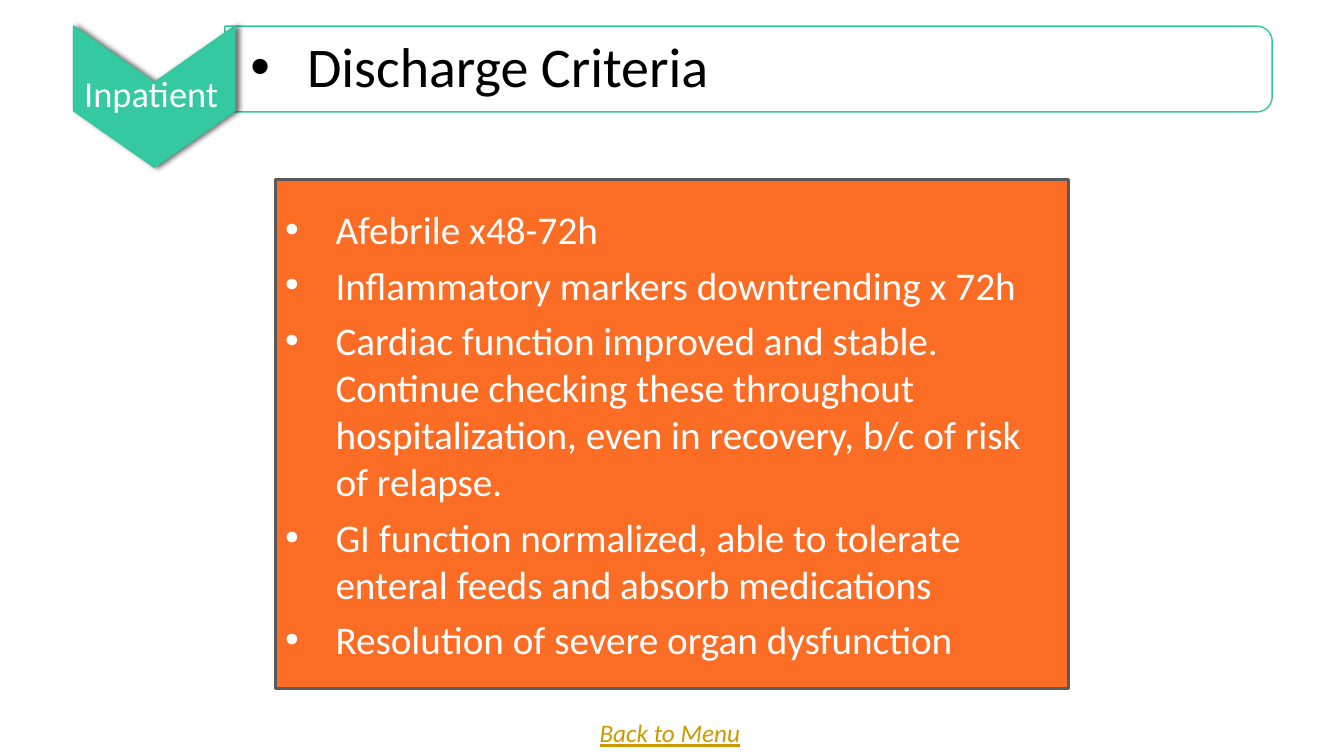
import math
from dataclasses import dataclass

from lxml import etree
from pptx import Presentation
from pptx import util as u
from pptx.dml import color
from pptx.enum import shapes, text
from pptx.oxml import ns

Pt = u.Pt


@dataclass(frozen=True)
class Theme:
    font: str = "Calibri"
    white: str = "FFFFFF"
    black: str = "000000"
    green: str = "35C9A2"
    green_line: str = "30C8A0"
    orange: str = "FB6C25"
    grey: str = "5A5A5A"
    gold: str = "CC9900"
    title_size: float = 40
    body_size: float = 28
    label_size: float = 26
    link_size: float = 18


THEME = Theme()
CRITERIA = [
    "Afebrile x48-72h",
    "Inflammatory markers downtrending x 72h",
    "Cardiac function improved and stable. Continue checking these throughout "
    "hospitalization, even in recovery, b/c of risk of relapse.",
    "GI function normalized, able to tolerate enteral feeds and absorb medications",
    "Resolution of severe organ dysfunction",
]


def rgb(value):
    return color.RGBColor.from_string(value)


def add_child(parent, tag, **attributes):
    child = etree.SubElement(parent, ns.qn(tag))
    for name, value in attributes.items():
        child.set(name, str(value))
    return child


def write_text(shape, content, size, fill, align=text.PP_ALIGN.LEFT,
               anchor=text.MSO_ANCHOR.TOP, margins=(7.2, 3.6, 7.2, 3.6),
               italic=False, underline=False, hanging=None, indent=0,
               gap=0, line_spacing=None):
    frame = shape.text_frame
    frame.word_wrap = True
    frame.vertical_anchor = anchor
    (frame.margin_left, frame.margin_top,
     frame.margin_right, frame.margin_bottom) = map(Pt, margins)
    lines = [content] if isinstance(content, str) else content
    for index, line in enumerate(lines):
        paragraph = frame.add_paragraph() if index else frame.paragraphs[0]
        paragraph.alignment = align
        paragraph.space_before = paragraph.space_after = Pt(gap)
        if line_spacing:
            paragraph.line_spacing = line_spacing
        run = paragraph.add_run()
        run.text = line
        font = run.font
        font.name, font.size = THEME.font, Pt(size)
        font.italic, font.underline = italic, underline
        font.color.rgb = rgb(fill)
        if hanging:
            properties = paragraph._p.get_or_add_pPr()
            properties.set("marL", str(Pt(indent)))
            properties.set("indent", str(Pt(-hanging)))
            add_child(properties, "a:buFont", typeface="Arial")
            add_child(properties, "a:buChar", char="•")


def style_shape(shape, fill, line, width):
    shape.shadow.inherit = False
    shape.fill.solid()
    shape.fill.fore_color.rgb = rgb(fill)
    shape.line.color.rgb = rgb(line)
    shape.line.width = Pt(width)


def add_outline(container, points):
    start, *others = [(Pt(x), Pt(y)) for x, y in points]
    builder = container.build_freeform(*start)
    builder.add_line_segments(others, close=True)
    return builder.convert_to_shape()


def add_title_bar(container, left, top, width, height):
    radius, steps = 10.8, 12
    right, bottom = left + width, top + height
    corners = [(top + radius, -90), (bottom - radius, 0)]
    arcs = []
    for center_y, start in corners:
        for step in range(steps + 1):
            angle = math.radians(start + 90 * step / steps)
            arcs.append((right - radius + radius * math.cos(angle),
                         center_y + radius * math.sin(angle)))
    bar = add_outline(container, [(left, top), *arcs, (left, bottom)])
    style_shape(bar, THEME.white, THEME.green_line, 1)
    solid = bar._element.spPr.find(ns.qn("a:solidFill"))
    add_child(solid[0], "a:alpha", val=90000)
    write_text(bar, "Discharge Criteria", size=THEME.title_size, fill=THEME.black,
               anchor=text.MSO_ANCHOR.MIDDLE, margins=(13.7, 4.3, 4.3, 4.3),
               indent=45, hanging=40.5, line_spacing=0.9)


def add_stage_chevron(container, left, top, width, height):
    notch = 0.4 * height
    middle, right = left + width / 2, left + width
    chevron = add_outline(container, [
        (left, top), (middle, top + notch), (right, top),
        (right, top + height - notch), (middle, top + height),
        (left, top + height - notch)])
    style_shape(chevron, THEME.green, THEME.green_line, 1)
    effects = chevron._element.spPr.find(ns.qn("a:effectLst"))
    shadow = add_child(effects, "a:outerShdw", blurRad=Pt(4), dist=Pt(2),
                       dir=0, algn="ctr", rotWithShape=0)
    shade = add_child(shadow, "a:srgbClr", val=THEME.black)
    add_child(shade, "a:alpha", val=60000)
    label = container.add_textbox(Pt(left), Pt(top + 28.8), Pt(width - 4.3), Pt(38.9))
    write_text(label, "Inpatient", size=THEME.label_size, fill=THEME.white,
               align=text.PP_ALIGN.CENTER, margins=(0, 3.6, 0, 3.6))


def add_header(slide, left, top, width):
    group = slide.shapes.add_group_shape()
    add_title_bar(group.shapes, left + 108, top, width - 108, 61.2)
    add_stage_chevron(group.shapes, left, top, 115.2, 100.8)


def add_criteria(slide, left, top, width, height):
    panel = slide.shapes.add_shape(shapes.MSO_SHAPE.RECTANGLE, Pt(left), Pt(top),
                                   Pt(width), Pt(height))
    style_shape(panel, THEME.orange, THEME.grey, 2)
    write_text(panel, CRITERIA, size=THEME.body_size, fill=THEME.white,
               anchor=text.MSO_ANCHOR.MIDDLE, indent=36, hanging=36, gap=3)


def add_menu_link(slide, left, top, width, height):
    link = slide.shapes.add_textbox(Pt(left), Pt(top), Pt(width), Pt(height))
    write_text(link, "Back to Menu", size=THEME.link_size, fill=THEME.gold,
               italic=True, underline=True)


def main():
    presentation = Presentation()
    presentation.slide_width, presentation.slide_height = Pt(960), Pt(540)
    slide = presentation.slides.add_slide(presentation.slide_layouts[6])
    add_menu_link(slide, 421.2, 509, 117.4, 28.8)
    add_criteria(slide, 196.6, 128.2, 566.6, 363.6)
    add_header(slide, 52.6, 18.7, 856.1)
    presentation.save("out.pptx")


if __name__ == "__main__":
    main()
